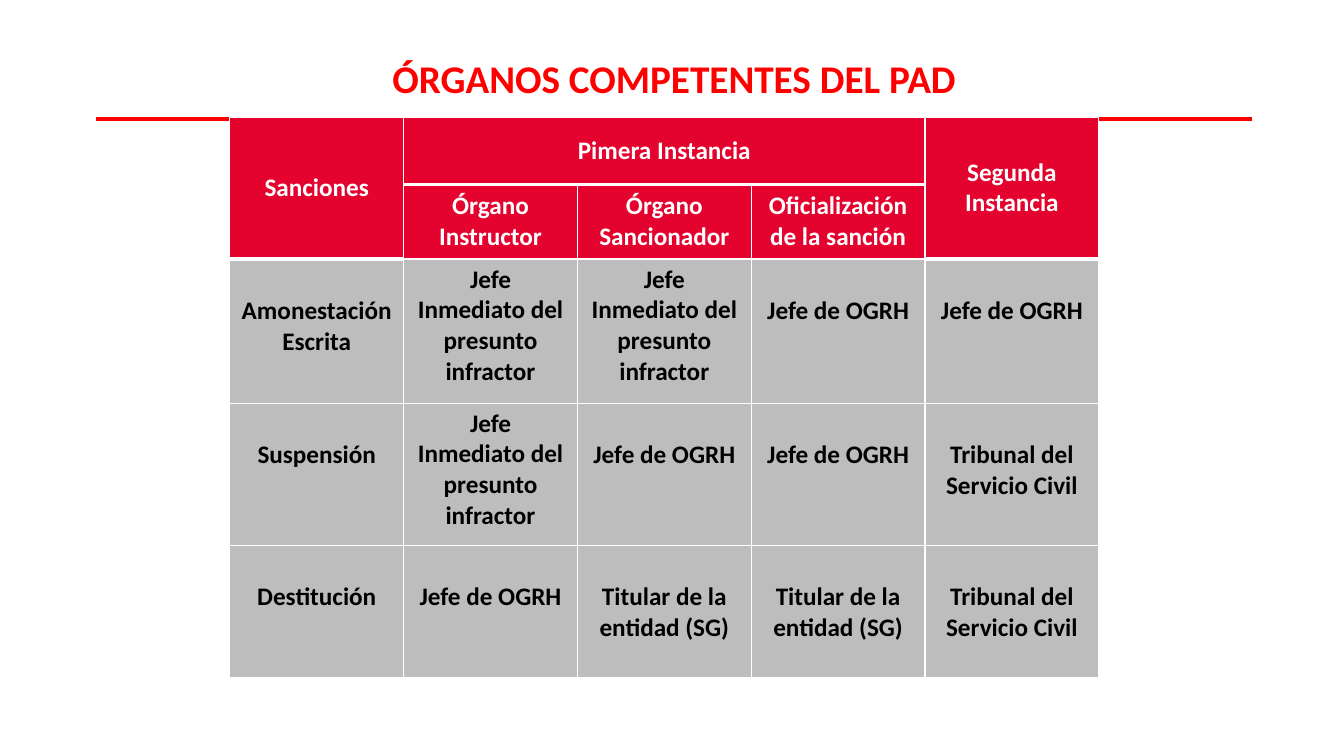
from dataclasses import dataclass

from lxml.etree import SubElement
from pptx import Presentation
from pptx.dml.color import RGBColor
from pptx.enum.shapes import MSO_CONNECTOR
from pptx.enum.text import MSO_ANCHOR, PP_ALIGN
from pptx.oxml.ns import qn
from pptx.slide import Slide
from pptx.table import _Cell
from pptx.text.text import TextFrame
from pptx.util import Inches, Pt

COLORS = {
    "title": "FF0000",
    "header": "E4022E",
    "body": "BDBDBD",
    "white": "FFFFFF",
    "black": "000000",
}
FONT = "Calibri"
RULE_LEFT, RULE_RIGHT, RULE_TOP = 0.95, 12.42, 1.18
TABLE_LEFT, TABLE_TOP, TABLE_WIDTH = 2.28, 1.16, 8.62
ROW_HEIGHTS = [0.67, 0.74, 1.43, 1.41, 1.31]
COLUMN_COUNT = 5
HEADER_ROWS = 2
CHIEF = "Jefe Inmediato del presunto infractor"
OFFICE = "Jefe de OGRH"
HOLDER = "Titular de la entidad (SG)"
TRIBUNAL = "Tribunal del Servicio Civil"


@dataclass(frozen=True)
class Entry:
    row: int
    column: int
    text: str
    row_span: int = 1
    column_span: int = 1


HEADERS = [
    Entry(0, 0, "Sanciones", row_span=2),
    Entry(0, 1, "Pimera Instancia", column_span=3),
    Entry(0, 4, "Segunda Instancia", row_span=2),
    Entry(1, 1, "Órgano Instructor"),
    Entry(1, 2, "Órgano Sancionador"),
    Entry(1, 3, "Oficialización de la sanción"),
]
SANCTIONS = [
    ["Amonestación Escrita", CHIEF, CHIEF, OFFICE, OFFICE],
    ["Suspensión", CHIEF, OFFICE, OFFICE, TRIBUNAL],
    ["Destitución", OFFICE, HOLDER, HOLDER, TRIBUNAL],
]


def rgb(name: str) -> RGBColor:
    """Return a named colour."""
    return RGBColor.from_string(COLORS[name])


def write(frame: TextFrame, text: str, size: float, color: str) -> None:
    """Put one centred bold run in a text frame."""
    para = frame.paragraphs[0]
    para.alignment = PP_ALIGN.CENTER
    span = para.add_run()
    span.text = text
    span.font.name = FONT
    span.font.size = Pt(size)
    span.font.bold = True
    span.font.color.rgb = rgb(color)


def style_cell(cell: _Cell, fill: str, bottom: float) -> None:
    """Give a cell white borders and a solid fill."""
    properties = cell._tc.get_or_add_tcPr()
    for side, width in (("L", 1), ("R", 1), ("T", 1), ("B", bottom)):
        line = SubElement(properties, qn(f"a:ln{side}"), w=str(Pt(width)))
        solid = SubElement(line, qn("a:solidFill"))
        SubElement(solid, qn("a:srgbClr"), val=COLORS["white"])
    cell.fill.solid()
    cell.fill.fore_color.rgb = rgb(fill)


def add_title(page: Slide) -> None:
    """Place the slide title."""
    box = page.shapes.title
    box.left, box.top = Inches(RULE_LEFT), Inches(0.49)
    box.width, box.height = Inches(RULE_RIGHT - RULE_LEFT), Inches(0.57)
    box.text_frame.word_wrap = True
    box.text_frame.vertical_anchor = MSO_ANCHOR.MIDDLE
    write(box.text_frame, "ÓRGANOS COMPETENTES DEL PAD", 28, "title")


def add_rule(page: Slide) -> None:
    """Draw the line under the title."""
    rule = page.shapes.add_connector(
        MSO_CONNECTOR.STRAIGHT, Inches(RULE_LEFT), Inches(RULE_TOP),
        Inches(RULE_RIGHT), Inches(RULE_TOP))
    rule.line.color.rgb = rgb("title")
    rule.line.width = Pt(2.25)
    SubElement(rule._element.spPr, qn("a:effectLst"))


def add_sanctions_table(page: Slide) -> None:
    """Build the table of sanctions and competent bodies."""
    table = page.shapes.add_table(
        len(ROW_HEIGHTS), COLUMN_COUNT, Inches(TABLE_LEFT), Inches(TABLE_TOP),
        Inches(TABLE_WIDTH), Inches(sum(ROW_HEIGHTS))).table
    table.horz_banding = False
    for column in table.columns:
        column.width = Inches(TABLE_WIDTH / COLUMN_COUNT)
    for index, height in enumerate(ROW_HEIGHTS):
        table.rows[index].height = Inches(height)
        for column in range(COLUMN_COUNT):
            fill = "header" if index < HEADER_ROWS else "body"
            style_cell(table.cell(index, column), fill, 1 if index else 3)
    for entry in HEADERS:
        cell = table.cell(entry.row, entry.column)
        if entry.row_span > 1 or entry.column_span > 1:
            cell.merge(table.cell(entry.row + entry.row_span - 1,
                                  entry.column + entry.column_span - 1))
        cell.vertical_anchor = MSO_ANCHOR.MIDDLE
        write(cell.text_frame, entry.text, 18, "white")
    for index, texts in enumerate(SANCTIONS, HEADER_ROWS):
        for column, text in enumerate(texts):
            cell = table.cell(index, column)
            cell.vertical_anchor = MSO_ANCHOR.TOP
            cell.margin_top = Inches(0.05 if text == CHIEF else 0.36)
            write(cell.text_frame, text, 18, "black")


def main() -> None:
    """Build and save the deck."""
    deck = Presentation()
    deck.slide_width, deck.slide_height = Inches(13.33), Inches(7.5)
    page = deck.slides.add_slide(deck.slide_layouts[5])
    add_title(page)
    add_rule(page)
    add_sanctions_table(page)
    deck.save("out.pptx")


if __name__ == "__main__":
    main()
